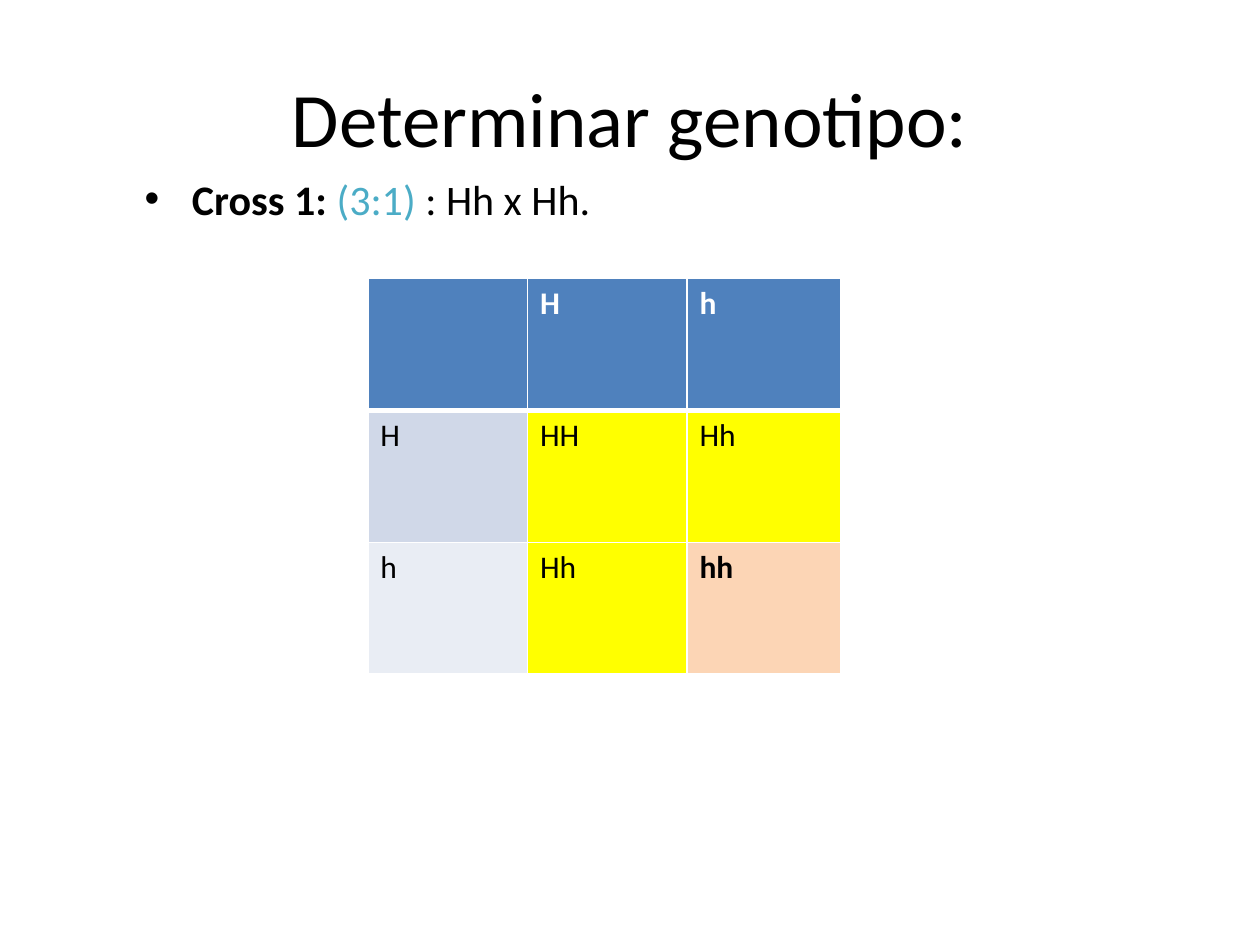
import dataclasses

import lxml.etree
import pptx
import pptx.dml.color
import pptx.enum.text
import pptx.oxml.ns
import pptx.util

Pt = pptx.util.Pt
RGB = pptx.dml.color.RGBColor.from_string
qn = pptx.oxml.ns.qn


@dataclasses.dataclass(frozen=True)
class Theme:
    """Colours and type sizes of the deck."""
    font: str = "Calibri"
    ink: str = "000000"
    white: str = "FFFFFF"
    ratio: str = "4BACC6"
    header: str = "4F81BD"
    band_dark: str = "D0D8E8"
    band_light: str = "E9EDF4"
    dominant: str = "FFFF00"
    recessive: str = "FCD5B5"
    title_size: int = 44
    body_size: int = 24
    cell_size: int = 18


THEME = Theme()


def style_font(font, size, color, bold=None):
    """Set the face, size, colour and weight of a font."""
    font.name = THEME.font
    font.size = Pt(size)
    font.color.rgb = RGB(color)
    font.bold = bold


def place(shape, box):
    """Move a shape to a left, top, width, height box in points."""
    shape.left, shape.top, shape.width, shape.height = map(Pt, box)


def add_title(page, box, text):
    """Fill and format the title placeholder."""
    title = page.shapes.title
    place(title, box)
    title.text_frame.text = text
    title.text_frame.vertical_anchor = pptx.enum.text.MSO_ANCHOR.MIDDLE
    para = title.text_frame.paragraphs[0]
    para.alignment = pptx.enum.text.PP_ALIGN.CENTER
    style_font(para.font, THEME.title_size, THEME.ink)


def add_cross(page, box, spans):
    """Write the bulleted line that names the cross."""
    frame = page.shapes.add_textbox(*map(Pt, box)).text_frame
    frame.word_wrap = True
    para = frame.paragraphs[0]
    props = para._p.get_or_add_pPr()
    props.set("marL", str(Pt(27)))
    props.set("indent", str(-Pt(27)))
    lxml.etree.SubElement(props, qn("a:buFont"), typeface="Arial")
    lxml.etree.SubElement(props, qn("a:buChar"), char="•")
    for text, color, bold in spans:
        span = para.add_run()
        span.text = text
        style_font(span.font, THEME.body_size, color, bold)


def set_borders(cell, top, bottom):
    """Draw white cell borders, with the given top and bottom widths."""
    props = cell._tc.get_or_add_tcPr()
    sides = (("L", 1), ("R", 1), ("T", top), ("B", bottom))
    for index, (side, width) in enumerate(sides):
        line = lxml.etree.Element(qn(f"a:ln{side}"), w=str(Pt(width)))
        fill = lxml.etree.SubElement(line, qn("a:solidFill"))
        lxml.etree.SubElement(fill, qn("a:srgbClr"), val=THEME.white)
        props.insert(index, line)


def add_punnett(page, box, gametes):
    """Build the Punnett square of two parents with the same gametes."""
    count = len(gametes) + 1
    table = page.shapes.add_table(count, count, *map(Pt, box)).table
    for column, width in zip(table.columns, (91.2, 91.2, 87.6)):
        column.width = Pt(width)
    for row in table.rows:
        row.height = Pt(box[3] / count)
    bands = (THEME.band_dark, THEME.band_light)
    texts = [("", *gametes)]
    fills = [(THEME.header,) * count]
    for gamete, band in zip(gametes, bands):
        pairs = ["".join(sorted(gamete + other)) for other in gametes]
        texts.append((gamete, *pairs))
        fills.append((band, *(THEME.recessive if pair.islower() else THEME.dominant
                              for pair in pairs)))
    for row in range(count):
        for column in range(count):
            cell, text = table.cell(row, column), texts[row][column]
            cell.text = text
            cell.fill.solid()
            cell.fill.fore_color.rgb = RGB(fills[row][column])
            set_borders(cell, 3 if row == 1 else 1, 3 if row == 0 else 1)
            style_font(cell.text_frame.paragraphs[0].font, THEME.cell_size,
                       THEME.ink if row else THEME.white,
                       row == 0 or text == "hh")


def main():
    """Build the deck and save it."""
    deck = pptx.Presentation()
    deck.slide_width, deck.slide_height = Pt(720), Pt(540)
    page = deck.slides.add_slide(deck.slide_layouts[5])
    add_title(page, (36, 21.6, 648, 90), "Determinar genotipo:")
    add_cross(page, (75.6, 95.5, 569.5, 302.5), (
        ("Cross 1: ", THEME.ink, True),
        ("(3:1)", THEME.ratio, False),
        (" : Hh x Hh.", THEME.ink, False),
    ))
    add_punnett(page, (210.2, 159.1, 270, 226.2), ("H", "h"))
    deck.save("out.pptx")


if __name__ == "__main__":
    main()
